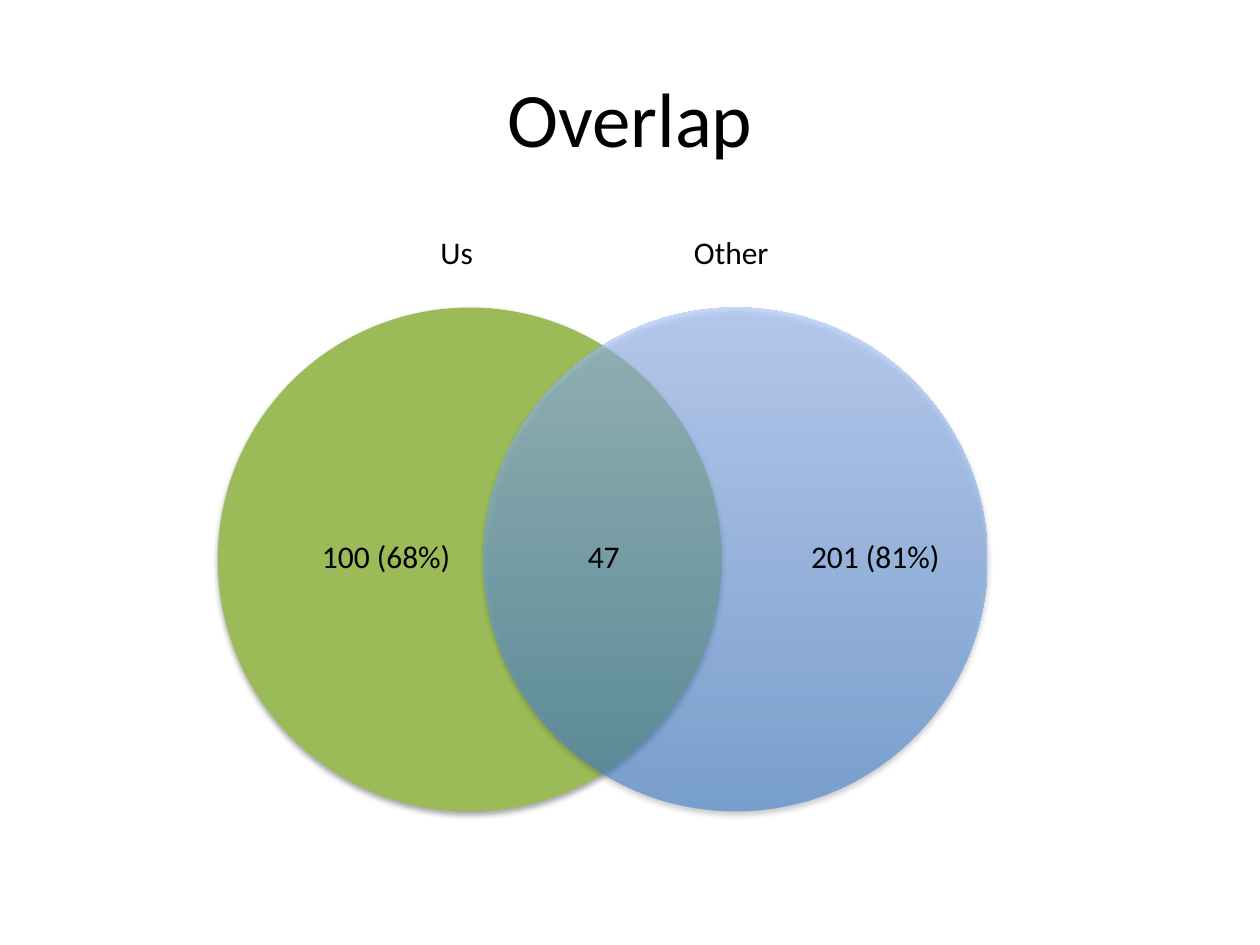
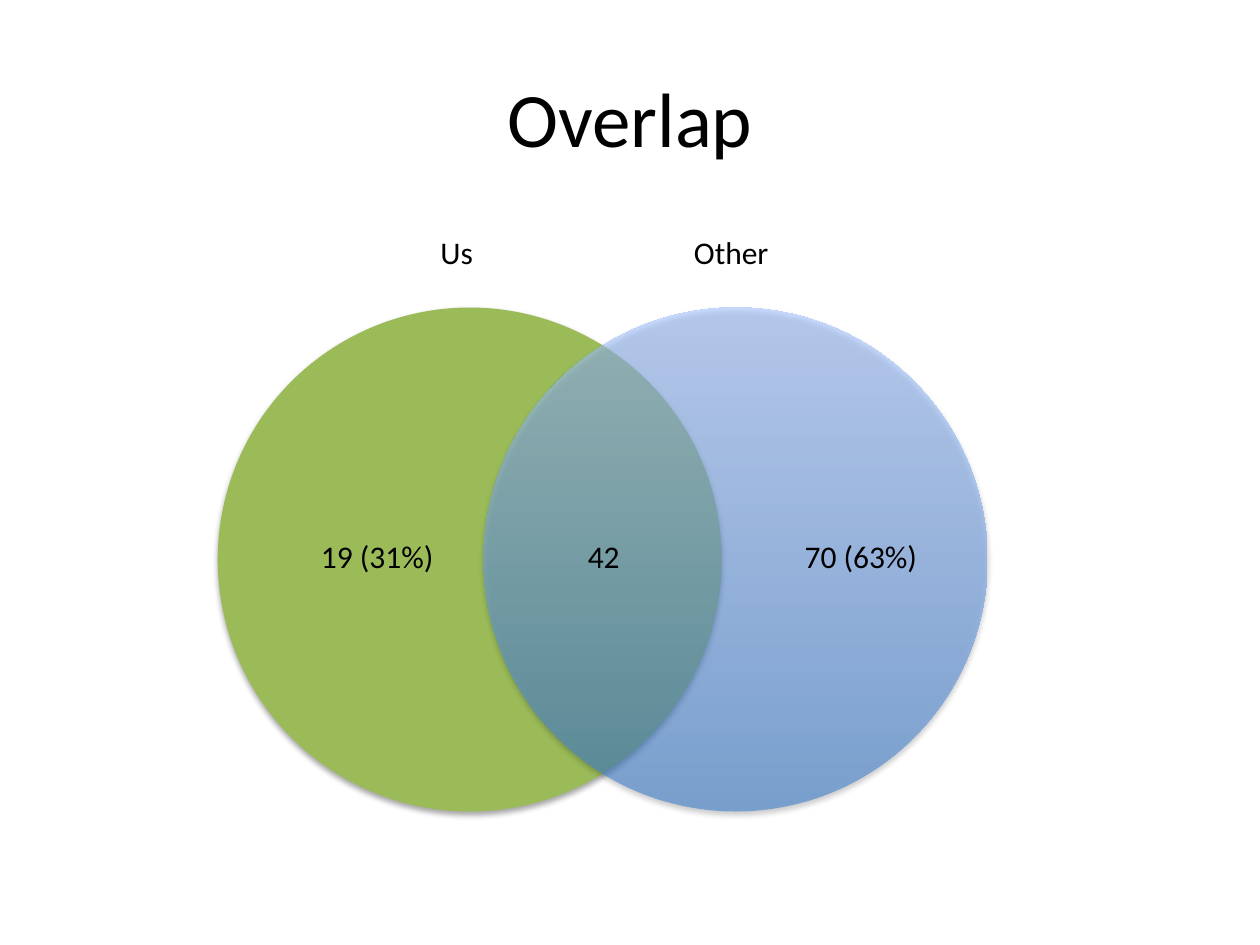
from lxml import etree
from pptx import Presentation
from pptx.dml.color import RGBColor
from pptx.enum.shapes import MSO_SHAPE as Shape
from pptx.enum.text import MSO_ANCHOR as Anchor, PP_ALIGN as Align
from pptx.oxml.ns import qn
from pptx.util import Cm, Pt

FONT = "Calibri"
BLACK, GREEN = "000000", "9BBB59"
BLUES = ("3F80CE", "A4C4FF")  # bottom to top
BLUE_OPACITY = 58
DIAMETER = 10.16
CIRCLE_STEP = 5.36  # distance between circle centres
LABEL_Y, COUNT_Y = -1.63, 4.5
LINE_HEIGHT = 1.02


def rgb(value):
    return RGBColor.from_string(value)


def write(tf, text, size=18, color=BLACK, align=Align.LEFT, anchor=Anchor.TOP, wrap=False):
    """Put one formatted line into a text frame."""
    tf.word_wrap = wrap
    tf.vertical_anchor = anchor
    p = tf.paragraphs[0]
    p.alignment = align
    r = p.add_run()
    r.text = text
    r.font.name, r.font.size = FONT, Pt(size)
    r.font.color.rgb = rgb(color)


def add_label(s, text, x, y, width):
    tb = s.shapes.add_textbox(Cm(x), Cm(y), Cm(width), Cm(LINE_HEIGHT))
    write(tb.text_frame, text)


def set_alpha(color, percent):
    etree.SubElement(color, qn("a:alpha"), val=str(percent * 1000))


def add_shadow(sp):
    sp.shadow.inherit = False
    effects = sp._element.spPr.find(qn("a:effectLst"))
    shadow = etree.SubElement(effects, qn("a:outerShdw"), blurRad=str(Pt(3.1)),
                              dist=str(Pt(1.8)), dir="5400000", rotWithShape="0")
    set_alpha(etree.SubElement(shadow, qn("a:srgbClr"), val=BLACK), 35)


def add_circle(s, x, y):
    sp = s.shapes.add_shape(Shape.OVAL, Cm(x), Cm(y), Cm(DIAMETER), Cm(DIAMETER))
    sp.line.fill.background()
    add_shadow(sp)
    return sp.fill


def fill_blue(fill):
    """Translucent gradient, darker at the bottom."""
    fill.gradient()
    fill.gradient_angle = 90
    for stop, color in zip(fill.gradient_stops, BLUES):
        stop.color.rgb = rgb(color)
        set_alpha(stop._gs.find(qn("a:srgbClr")), BLUE_OPACITY)


def add_title(s, text):
    title = s.shapes.title
    title.left, title.top, title.width, title.height = Cm(1.27), Cm(0.76), Cm(22.86), Cm(3.18)
    write(title.text_frame, text, size=44, align=Align.CENTER, anchor=Anchor.MIDDLE, wrap=True)


def add_venn(s, x, y, counts):
    """Two overlapping circles; x, y is the corner of the left one."""
    green = add_circle(s, x, y)
    green.solid()
    green.fore_color.rgb = rgb(GREEN)
    fill_blue(add_circle(s, x + CIRCLE_STEP, y))

    # Counts inside the circles
    for text, dx, width in counts:
        add_label(s, text, x + dx, y + COUNT_Y, width)

    # Group names above the circles
    for text, dx, width in (("Us", 4.24, 1.17), ("Other", 9.35, 2.03)):
        add_label(s, text, x + dx, y + LABEL_Y, width)


def add_overlap_slide(prs, counts):
    s = prs.slides.add_slide(prs.slide_layouts[5])
    add_title(s, "Overlap")
    add_venn(s, 4.39, 6.2, counts)


def main():
    prs = Presentation()
    prs.slide_width, prs.slide_height = Cm(25.4), Cm(19.05)

    # Each count: text, offset from the left circle, width
    add_overlap_slide(prs, [("47", 7.21, 1.17), ("201 (81%)", 11.71, 3.12),
                            ("100 (68%)", 1.85, 3.12)])
    add_overlap_slide(prs, [("42", 7.21, 1.17), ("70 (63%)", 11.58, 2.79),
                            ("19 (31%)", 1.83, 2.79)])
    prs.save("out.pptx")


if __name__ == "__main__":
    main()
